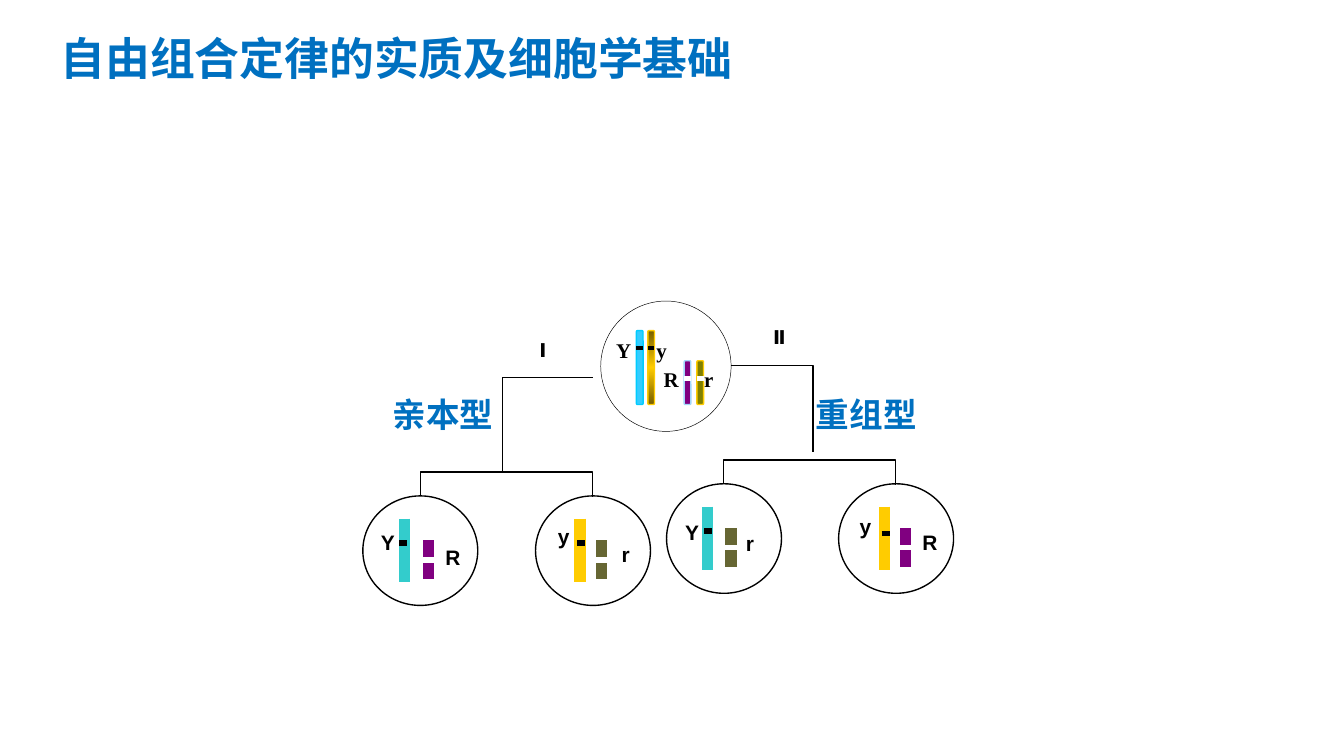
from copy import deepcopy

from pptx import Presentation
from pptx.dml.color import RGBColor
from pptx.enum.shapes import MSO_CONNECTOR, MSO_SHAPE
from pptx.enum.text import MSO_ANCHOR, PP_ALIGN
from pptx.oxml.ns import qn
from pptx.util import Inches, Pt
from lxml.etree import SubElement

BLACK = RGBColor(0x00, 0x00, 0x00)
WHITE = RGBColor(0xFF, 0xFF, 0xFF)
BLUE = RGBColor(0x00, 0x70, 0xC0)
SKY = RGBColor(0x33, 0xCC, 0xFF)
CYAN = RGBColor(0x00, 0xCC, 0xFF)
PALE_BLUE = RGBColor(0xA3, 0xD7, 0xFB)
TEAL = RGBColor(0x33, 0xCC, 0xCC)
GOLD = RGBColor(0xFF, 0xCC, 0x00)
BROWN = RGBColor(0x76, 0x5E, 0x00)
PURPLE = RGBColor(0x80, 0x00, 0x80)
OLIVE = RGBColor(0x80, 0x80, 0x00)
MOSS = RGBColor(0x66, 0x66, 0x33)

SANS, SERIF, CHINESE = "Arial", "Times New Roman", "Noto Sans CJK SC"
ALLELE_COLORS = {"Y": TEAL, "y": GOLD, "R": PURPLE, "r": MOSS}


class Diagram:
    """Draws on one slide with a grid of 100 columns by 56.25 rows."""

    def __init__(self, deck):
        self.page = deck.slides.add_slide(deck.slide_layouts[5])
        self.column = deck.slide_width / 100
        self.row = deck.slide_height / 56.25

    def place(self, across, down):
        return round(across * self.column), round(down * self.row)

    def style(self, frame, text, size, font, color):
        frame.text = text
        para = frame.paragraphs[0]
        para.alignment = PP_ALIGN.CENTER
        para.font.size, para.font.bold = Pt(size), True
        para.font.color.rgb, para.font.name = color, font
        properties = para.font._element
        SubElement(properties, qn("a:ea")).set("typeface", font)
        return para

    def title(self, left, top, width, height, text):
        box = self.page.shapes.title
        box.left, box.top = self.place(left, top)
        box.width, box.height = self.place(width, height)
        box.text_frame.vertical_anchor = MSO_ANCHOR.BOTTOM
        self.style(box.text_frame, text, 24, CHINESE, BLUE).line_spacing = 0.9

    def label(self, middle, top, text, size=11.2, font=SANS, color=BLACK,
              width=3.6, height=2.9, wrap=True):
        box = self.page.shapes.add_textbox(
            *self.place(middle - width / 2, top), *self.place(width, height))
        box.text_frame.word_wrap = wrap
        return self.style(box.text_frame, text, size, font, color)

    def allele_pair(self, middle, top, first, second):
        para = self.label(middle, top, f"{first}\t{second}", font=SERIF, width=5.9)
        para.alignment = PP_ALIGN.LEFT
        tabs = SubElement(para._p.pPr, qn("a:tabLst"))
        para.font._element.addprevious(tabs)
        stop = SubElement(tabs, qn("a:tab"))
        stop.set("pos", str(round(3 * self.column)))
        stop.set("algn", "l")

    def shape(self, kind, left, top, width, height, line, weight, fill=None):
        shape = self.page.shapes.add_shape(
            kind, *self.place(left, top), *self.place(width, height))
        shape.shadow.inherit = False
        if fill is None:
            shape.fill.background()
        else:
            shape.fill.solid()
            shape.fill.fore_color.rgb = fill
        shape.line.color.rgb, shape.line.width = line, Pt(weight)
        return shape

    def shade(self, shape, edge, middle):
        shape.fill.gradient()
        shape.fill.gradient_angle = 90
        first, last = shape.fill.gradient_stops
        first.color.rgb, first.position = middle, 0.5
        last.color.rgb, last.position = edge, 1
        stops = shape._element.spPr.find(qn("a:gradFill")).find(qn("a:gsLst"))
        stops.insert(0, deepcopy(stops[1]))
        stops[0].set("pos", "0")

    def line(self, start, end, color=BLACK, weight=0.75,
             kind=MSO_CONNECTOR.STRAIGHT):
        line = self.page.shapes.add_connector(
            kind, *self.place(*start), *self.place(*end))
        line.line.color.rgb, line.line.width = color, Pt(weight)
        SubElement(line._element.spPr, qn("a:effectLst"))
        return line

    def corner(self, start, end):
        corner = self.line(start, end, kind=MSO_CONNECTOR.ELBOW)
        corner._element.spPr.find(qn("a:prstGeom")).set("prst", "bentConnector2")

    def bracket(self, left, right, foot, rise):
        middle, half, thickness = (left + right) / 2, (right - left) / 2, 0.1
        bracket = self.line(
            (middle - thickness / 2, foot + half),
            (middle + thickness / 2, foot - half), kind=MSO_CONNECTOR.ELBOW)
        properties = bracket._element.spPr
        properties.find(qn("a:xfrm")).set("rot", str(90 * 60000))
        guides = properties.find(qn("a:prstGeom")).get_or_add_avLst()
        guide = SubElement(guides, qn("a:gd"))
        guide.set("name", "adj1")
        guide.set("fmla", f"val {round(-rise / thickness * 100000)}")

    def chromosome(self, left, top, height, fill, line, mark, mark_weight):
        body = self.shape(MSO_SHAPE.FLOWCHART_ALTERNATE_PROCESS,
                          left, top, 0.5, height, line, 0.75, fill)
        self.line((left, top + 1.3), (left + 0.5, top + 1.3), mark, mark_weight)
        return body

    def gamete(self, left, top, alleles, long_bar, mark, first, short_bar, second):
        self.shape(MSO_SHAPE.OVAL, left, top, 8.55, 8.15, BLACK, 0.75)
        bars = ((long_bar, 1.7, 4.7, mark, BLACK, 0.6, first),
                (short_bar, 3.3, 2.9, (short_bar, 4.75), WHITE, 1.2, second))
        for allele, (across, down, length, band, color, width, spot) in zip(alleles, bars):
            x, y = left + across, top + down
            self.line((x, y), (x, y + length), ALLELE_COLORS[allele], 6)
            x, y = left + band[0], top + band[1]
            self.line((x - width / 2, y), (x + width / 2, y), color, 3)
            self.label(left + spot[0], top + spot[1], allele)


def main():
    deck = Presentation()
    deck.slide_width = Inches(10)
    deck.slide_height = deck.slide_width * 9 // 16
    diagram = Diagram(deck)
    diagram.title(1.8, 0.95, 55.4, 5.9, "自由组合定律的实质及细胞学基础")

    diagram.shape(MSO_SHAPE.OVAL, 44.7, 22.4, 9.7, 9.7, BLACK, 0.25)
    diagram.chromosome(47.35, 24.6, 5.5, SKY, CYAN, BLACK, 2.25)
    golden = diagram.chromosome(48.2, 24.6, 5.5, GOLD, GOLD, BLACK, 2.25)
    diagram.shade(golden, BROWN, GOLD)
    diagram.allele_pair(47.8, 24.6, "Y", "y")
    diagram.chromosome(50.9, 26.85, 3.25, PURPLE, PALE_BLUE, WHITE, 3)
    diagram.chromosome(51.85, 26.85, 3.25, OLIVE, GOLD, WHITE, 3)
    diagram.allele_pair(51.35, 26.8, "R", "r")

    for middle, text in ((32.95, "亲本型"), (64.45, "重组型")):
        diagram.label(middle, 28.8, text, 18, CHINESE, BLUE, 9.5, 4, False)
    for middle, top, text in ((40.4, 24.7, "Ⅰ"), (58, 23.75, "Ⅱ")):
        diagram.label(middle, top, text, 10.2, width=4, height=2.7)

    diagram.gamete(27, 36.9, "YR", 3.1, (3, 3.5), (1.85, 2), 4.9, (6.7, 3.15))
    diagram.gamete(39.85, 36.9, "yr", 3.3, (3.4, 3.5), (2.1, 1.6), 4.9, (6.7, 2.9))
    diagram.gamete(62.4, 36, "yR", 3.4, (3.5, 3.7), (2, 1.75), 4.95, (6.8, 2.9))
    diagram.gamete(49.6, 36, "Yr", 3.05, (3.1, 3.5), (1.9, 2.2), 4.8, (6.2, 3))

    diagram.bracket(31.3, 44.1, 36.9, 1.75)
    diagram.corner((44.1, 28.1), (37.4, 35.1))
    diagram.bracket(53.85, 66.65, 36, 1.75)
    diagram.corner((54.4, 27.2), (60.5, 33.65))
    deck.save("out.pptx")


if __name__ == "__main__":
    main()
